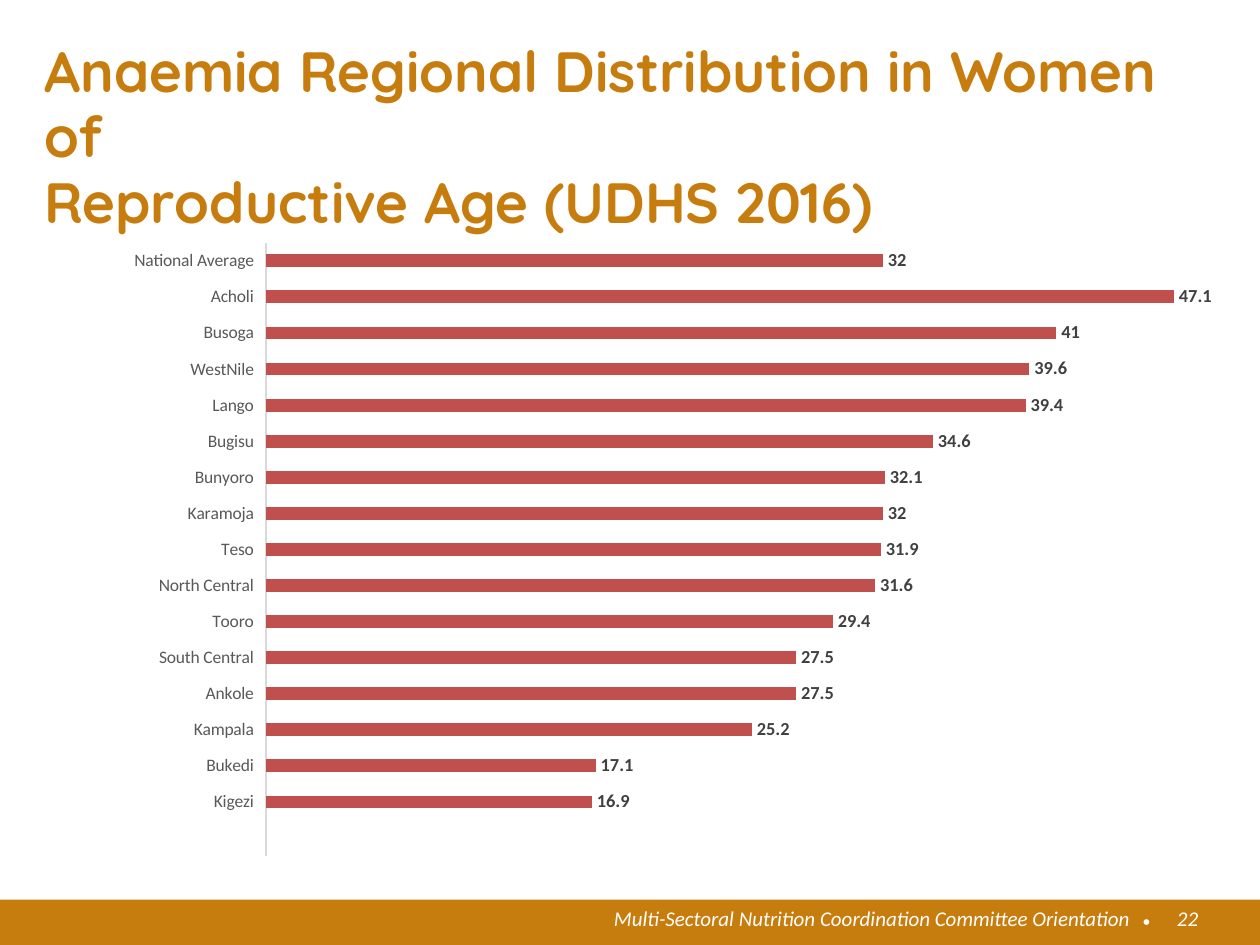
from dataclasses import dataclass

from lxml import etree
from pptx import Presentation
from pptx.chart.data import CategoryChartData
from pptx.dml.color import RGBColor
from pptx.enum.chart import XL_CHART_TYPE, XL_LABEL_POSITION, XL_TICK_LABEL_POSITION, XL_TICK_MARK
from pptx.enum.shapes import MSO_SHAPE
from pptx.enum.text import MSO_ANCHOR, MSO_AUTO_SIZE, PP_ALIGN
from pptx.oxml.ns import qn
from pptx.util import Inches, Pt

LEFT, RIGHT = PP_ALIGN.LEFT, PP_ALIGN.RIGHT
BAR = XL_CHART_TYPE.BAR_CLUSTERED
NO_TICKS = XL_TICK_MARK.NONE
WIDTH, HEIGHT = 10, 7.5


@dataclass(frozen=True)
class Theme:
    ochre: str = "C77C0E"
    bar: str = "C0504D"
    white: str = "FFFFFF"
    axis_text: str = "595959"
    axis_line: str = "D9D9D9"
    label: str = "404040"
    heading_font: str = "Quicksand"
    body_font: str = "Calibri"
    bullet_font: str = "Arial"
    title_size: float = 32.4
    footer_size: float = 12
    axis_size: float = 10
    label_size: float = 10.5


THEME = Theme()

TITLE = "Anaemia Regional Distribution in Women of\vReproductive Age (UDHS 2016)"
# Listed from the bottom of the chart upwards; the first row is left empty.
ANAEMIA = [
    ("", None), ("Kigezi", 16.9), ("Bukedi", 17.1), ("Kampala", 25.2),
    ("Ankole", 27.5), ("South Central", 27.5), ("Tooro", 29.4),
    ("North Central", 31.6), ("Teso", 31.9), ("Karamoja", 32),
    ("Bunyoro", 32.1), ("Bugisu", 34.6), ("Lango", 39.4),
    ("WestNile", 39.6), ("Busoga", 41), ("Acholi", 47.1),
    ("National Average", 32),
]
AXIS_MAX = 50
PLOT = {"x": 0.199, "y": 0.028, "w": 0.796, "h": 0.922}

TITLE_BOX = (0.35, 0.32, 9.3, 1.34)
CHART_BOX = (0.2, 1.78, 9.61, 5.28)
FOOTER_HEIGHT = 0.36
FOOTER = [
    ("Multi-Sectoral Nutrition Coordination Committee Orientation",
     (4.84, 7.19, 4.13, 0.4), dict(align=RIGHT, italic=True)),
    ("•", (9.07, 7.21, 0.18, 0.2), dict(font=THEME.bullet_font)),
    ("22", (9.18, 7.19, 0.33, 0.32), dict(align=RIGHT, italic=True)),
]


def inches(box):
    return [Inches(length) for length in box]


def style(font, name, size, color, bold=False, italic=False):
    font.name, font.size = name, Pt(size)
    font.bold, font.italic = bold, italic
    font.color.rgb = RGBColor.from_string(color)


def write(shape, text, font=THEME.body_font, size=THEME.footer_size,
          color=THEME.white, bold=False, italic=False, align=LEFT, spacing=1.0):
    frame = shape.text_frame
    frame.margin_left = frame.margin_right = frame.margin_top = frame.margin_bottom = 0
    frame.word_wrap = True
    frame.auto_size = MSO_AUTO_SIZE.NONE
    frame.vertical_anchor = MSO_ANCHOR.TOP
    paragraph = frame.paragraphs[0]
    paragraph.text = text
    paragraph.alignment, paragraph.line_spacing = align, spacing
    for run in paragraph.runs:
        style(run.font, font, size, color, bold, italic)


def fix_plot_area(chart):
    """Pin the inner plot area to the shares in PLOT."""
    plot_area = chart.plots[0]._element.getparent()
    for old in plot_area.findall(qn("c:layout")):
        plot_area.remove(old)
    layout = etree.Element(qn("c:layout"))
    manual = etree.SubElement(layout, qn("c:manualLayout"))
    settings = [("layoutTarget", "inner"), ("xMode", "edge"), ("yMode", "edge"), *PLOT.items()]
    for tag, value in settings:
        etree.SubElement(manual, qn(f"c:{tag}")).set("val", str(value))
    plot_area.insert(0, layout)


def add_anaemia_chart(slide):
    data = CategoryChartData()
    data.categories = [region for region, _ in ANAEMIA]
    data.add_series("Series 1", [share for _, share in ANAEMIA])
    chart = slide.shapes.add_chart(BAR, *inches(CHART_BOX), data).chart
    chart.has_legend = chart.has_title = False
    style(chart.font, THEME.body_font, THEME.axis_size, THEME.axis_text)
    fix_plot_area(chart)

    regions, shares = chart.category_axis, chart.value_axis
    regions.major_tick_mark = regions.minor_tick_mark = NO_TICKS
    regions.tick_label_position = XL_TICK_LABEL_POSITION.LOW
    style(regions.tick_labels.font, THEME.body_font, THEME.axis_size, THEME.axis_text)
    regions.format.line.color.rgb = RGBColor.from_string(THEME.axis_line)
    regions.format.line.width = Pt(0.75)
    shares.minimum_scale, shares.maximum_scale = 0, AXIS_MAX
    shares.has_major_gridlines = shares.visible = False

    plot = chart.plots[0]
    plot.gap_width, plot.vary_by_categories = 182, False
    bars = plot.series[0]
    bars.invert_if_negative = False
    bars.format.fill.solid()
    bars.format.fill.fore_color.rgb = RGBColor.from_string(THEME.bar)
    labels = bars.data_labels
    labels.show_value = True
    labels.position = XL_LABEL_POSITION.OUTSIDE_END
    style(labels.font, THEME.body_font, THEME.label_size, THEME.label, bold=True)


def add_footer(slide):
    band = slide.shapes.add_shape(
        MSO_SHAPE.RECTANGLE, *inches((0, HEIGHT - FOOTER_HEIGHT, WIDTH, FOOTER_HEIGHT)))
    band.shadow.inherit = False
    band.fill.solid()
    band.fill.fore_color.rgb = RGBColor.from_string(THEME.ochre)
    band.line.fill.background()
    for text, box, look in FOOTER:
        write(slide.shapes.add_textbox(*inches(box)), text, **look)


def main():
    deck = Presentation()
    deck.slide_width, deck.slide_height = Inches(WIDTH), Inches(HEIGHT)
    slide = deck.slides.add_slide(deck.slide_layouts.get_by_name("Title Only"))
    title = slide.shapes.title
    title.left, title.top, title.width, title.height = inches(TITLE_BOX)
    write(title, TITLE, font=THEME.heading_font, size=THEME.title_size,
          color=THEME.ochre, bold=True, spacing=0.96)
    add_anaemia_chart(slide)
    add_footer(slide)
    deck.save("out.pptx")


if __name__ == "__main__":
    main()
